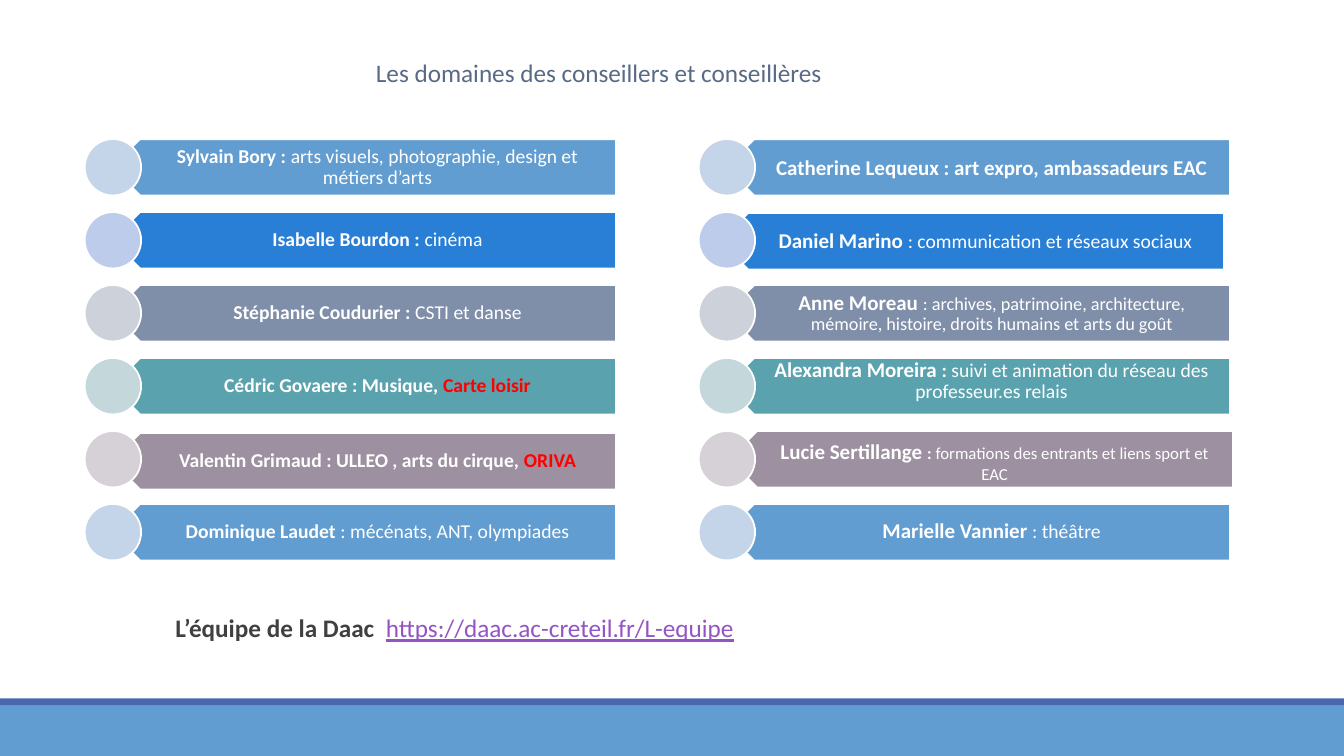
from pptx import Presentation
from pptx.dml.color import RGBColor
from pptx.enum.shapes import MSO_SHAPE
from pptx.enum.text import MSO_ANCHOR, PP_ALIGN
from pptx.util import Inches, Pt

RECTANGLE, PENTAGON, OVAL = MSO_SHAPE.RECTANGLE, MSO_SHAPE.PENTAGON, MSO_SHAPE.OVAL
TOP, MIDDLE = MSO_ANCHOR.TOP, MSO_ANCHOR.MIDDLE
LEFT, CENTER = PP_ALIGN.LEFT, PP_ALIGN.CENTER

# Content: each span is (text, size, bold, colour)
WHITE, RED = "FFFFFF", "FF0000"
TITLE = [("Les domaines des conseillers et conseillères", 18, False, "596A85")]
TEAM = [("L’équipe de la Daac  ", 18, True, "404040"),
        ("https://daac.ac-creteil.fr/L-equipe", 18, False, "9454C3")]

# (bar colour, circle colour) for each row
ROW_COLOURS = [("629DD1", "C5D5E9"), ("297FD5", "BECCEB"), ("7F8FA9", "CCD1DA"),
               ("5AA2AE", "C4D7DB"), ("9D90A0", "D5D1D6"), ("629DD1", "C5D5E9")]

# (bar shift x, bar shift y, text shift y, line spacing, spans)
LEFT_ADVISERS = [
    (0, 0, 0, 0.9, [("Sylvain Bory : ", 14, True, WHITE),
                    ("arts visuels, photographie, design et métiers d’arts", 14, False, WHITE)]),
    (0, 0, 0, 0.9, [("Isabelle Bourdon : ", 14, True, WHITE), ("cinéma", 14, False, WHITE)]),
    (0, 0, 0, 0.9, [("Stéphanie Coudurier : ", 14, True, WHITE),
                    ("CSTI et danse", 14, False, WHITE)]),
    (0, 0, 0, 0.9, [("Cédric Govaere : Musique, ", 14, True, WHITE),
                    ("Carte loisir", 14, True, RED)]),
    (0, 0.02, 0, 0.9, [("Valentin Grimaud : ULLEO , arts du cirque, ", 14, True, WHITE),
                       ("ORIVA", 14, True, RED)]),
    (0, 0, 0, 0.9, [("Dominique Laudet ", 14, True, WHITE),
                    (": mécénats, ANT, olympiades", 14, False, WHITE)]),
]
RIGHT_ADVISERS = [
    (0, 0, 0, 1, [("Catherine Lequeux : art expro, ambassadeurs EAC", 15, True, WHITE)]),
    (-0.06, 0.01, 0, 0.9, [("Daniel Marino ", 15, True, WHITE),
                           (": communication et réseaux sociaux", 14, False, WHITE)]),
    (0, 0, 0, 0.9, [("Anne Moreau ", 15, True, WHITE),
                    (": archives, patrimoine, architecture, mémoire, histoire, "
                     "droits humains et arts du goût", 13, False, WHITE)]),
    (0, 0, -0.05, 0.9, [("Alexandra Moreira ", 15, True, WHITE), (": ", 14, True, WHITE),
                        ("suivi et animation du réseau des professeur.es relais",
                         14, False, WHITE)]),
    (0.03, 0, 0.02, 1, [("Lucie Sertillange ", 15, True, WHITE), (": ", 12, True, WHITE),
                        ("formations des entrants et liens sport et EAC",
                         12, False, WHITE)]),
    (0, 0, 0, 0.9, [("Marielle Vannier ", 15, True, WHITE), (": théâtre", 14, False, WHITE)]),
]
COLUMNS = [(0.84, LEFT_ADVISERS), (6.93, RIGHT_ADVISERS)]

# Layout in inches
FIRST_ROW, LAST_ROW = 1.38, 5
ROW_STEP = (LAST_ROW - FIRST_ROW) / (len(ROW_COLOURS) - 1)
BAR_WIDTH, BAR_HEIGHT = 5, 0.56
BAR_OFFSET, TEXT_OFFSET = 0.27, 0.14

deck = Presentation()
deck.slide_width, deck.slide_height = Inches(13.33), Inches(7.5)
page = deck.slides.add_slide(deck.slide_layouts[6])


def colour(value):
    return RGBColor.from_string(value)


def add_block(kind, left, top, width, height, fill, outlined=True):
    block = page.shapes.add_shape(kind, Inches(left), Inches(top), Inches(width), Inches(height))
    block.shadow.inherit = False
    block.fill.solid()
    block.fill.fore_color.rgb = colour(fill)
    if outlined:
        block.line.color.rgb = colour(WHITE)
        block.line.width = Pt(1.25)
    else:
        block.line.fill.background()
    return block


def add_text(left, top, width, height, spans, insets, align=LEFT, anchor=TOP, spacing=1):
    box = page.shapes.add_textbox(Inches(left), Inches(top), Inches(width), Inches(height))
    frame = box.text_frame
    frame.word_wrap = True
    frame.vertical_anchor = anchor
    frame.margin_left, frame.margin_top, frame.margin_right, frame.margin_bottom = map(Inches, insets)
    para = frame.paragraphs[0]
    para.alignment = align
    para.line_spacing = spacing
    para.font.name = "Calibri"
    for text, size, bold, ink in spans:
        span = para.add_run()
        span.text = text
        span.font.size = Pt(size)
        span.font.bold = bold
        span.font.color.rgb = colour(ink)
    return para


# Footer bands
add_block(RECTANGLE, 0, 7, 13.33, 0.5, "629DD1", outlined=False)
add_block(RECTANGLE, 0, 6.93, 13.33, 0.07, "4A66AC", outlined=False)

# Title and team address
add_text(3.63, 0.52, 7.22, 0.4, TITLE, (0.1, 0.05, 0.1, 0.05))
team = add_text(1.74, 6.06, 11, 0.49, TEAM, (0, 0.05, 0, 0.05), spacing=0.9)
team.runs[-1].font.underline = True

# Adviser bars, each with its circle
for column_left, advisers in COLUMNS:
    for row, (shift_x, shift_y, text_shift, spacing, spans) in enumerate(advisers):
        bar_fill, circle_fill = ROW_COLOURS[row]
        row_top = FIRST_ROW + row * ROW_STEP
        bar_left = column_left + BAR_OFFSET + shift_x
        bar_top = row_top + shift_y
        bar = add_block(PENTAGON, bar_left, bar_top, BAR_WIDTH, BAR_HEIGHT, bar_fill)
        bar.rotation = 180
        add_text(bar_left + TEXT_OFFSET, bar_top + text_shift, BAR_WIDTH - TEXT_OFFSET,
                 BAR_HEIGHT, spans, (0.25, 0.06, 0.12, 0.06), CENTER, MIDDLE, spacing)
        add_block(OVAL, column_left, row_top, BAR_HEIGHT, BAR_HEIGHT, circle_fill)

deck.save("out.pptx")
